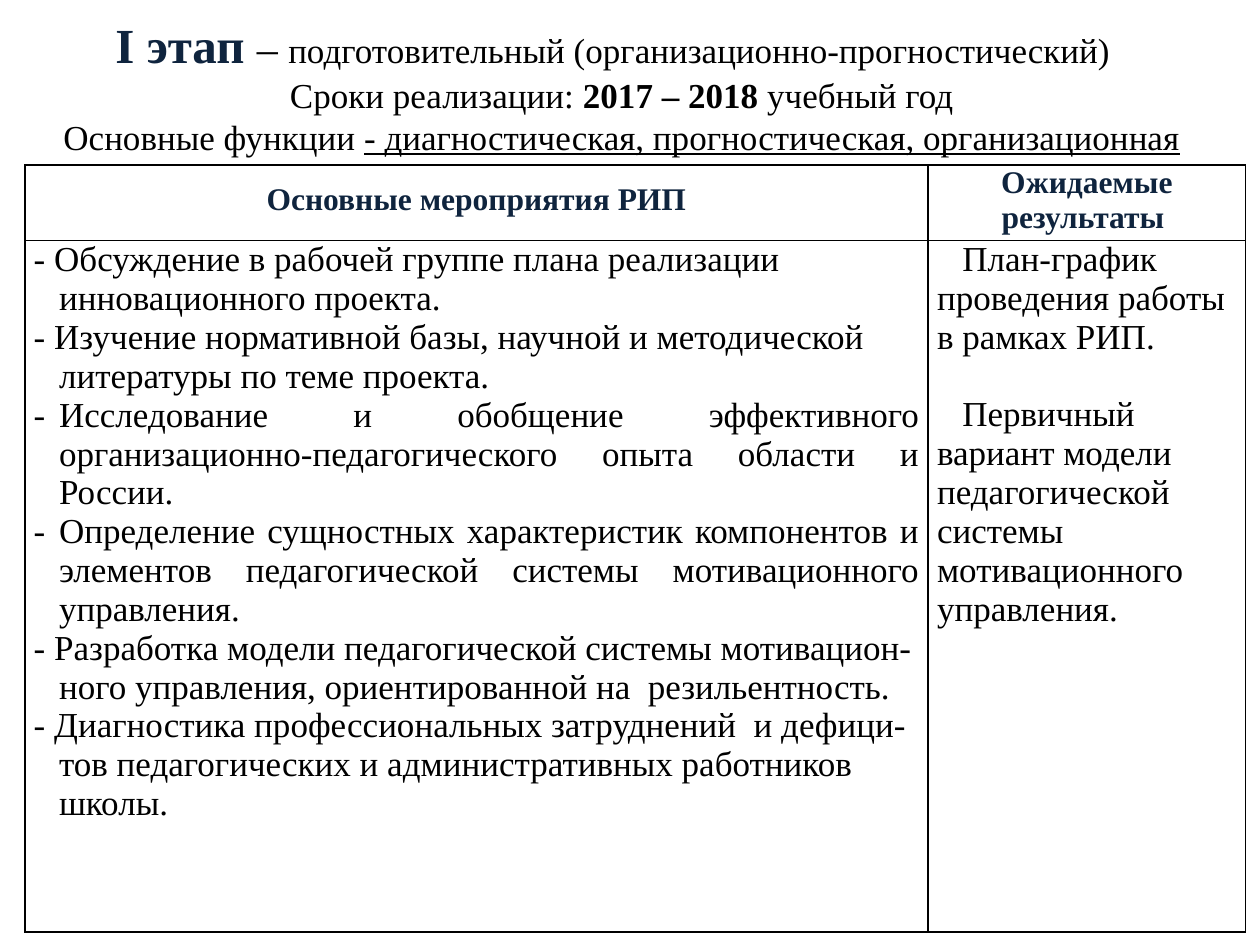
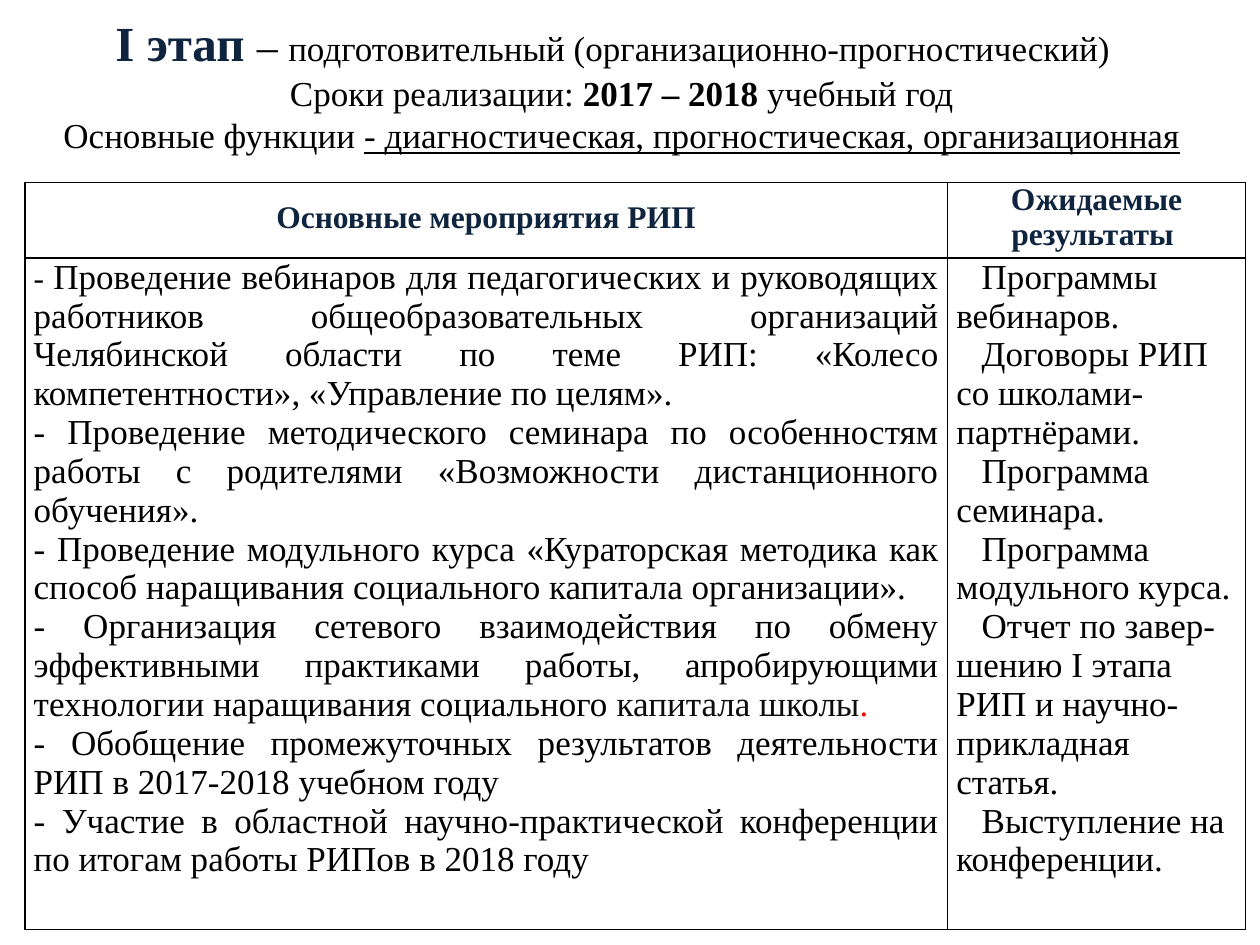
from lxml.etree import SubElement
from pptx import Presentation
from pptx.dml.color import RGBColor as Rgb
from pptx.enum.text import MSO_ANCHOR as Anchor, MSO_AUTO_SIZE as Auto, PP_ALIGN as Align
from pptx.oxml.ns import qn
from pptx.util import Cm, Pt

FONT = "Times New Roman"
INK = {"navy": "0F243E", "black": "000000", "dark": "0D0D0D", "red": "FF0000"}
WIDE = 24.61
LEFT = 0.5
HEAD = 1.52
STEP = 0.51
INSET = 0.18

TITLE = [
    [("I этап ", {"size": 28, "ink": "navy", "bold": True}),
     ("– ", {"size": 24}),
     ("подготовительный (организационно-прогностический) ", {})],
    [(" Сроки реализации: ", {}),
     ("2017 – 2018 ", {"bold": True}),
     ("учебный год", {})],
    [(" Основные функции ", {}),
     ("- диагностическая, прогностическая, организационная", {"line": True})],
]
HEADS = ["Основные мероприятия РИП", "Ожидаемые результаты "]

PLANS = [
    {"title": 0.03, "top": 3.33, "split": 18.21, "body": 13.94, "hang": True, "gap": 22,
     "tasks": [
         "- Обсуждение в рабочей группе плана реализации инновационного проекта.",
         "- Изучение нормативной базы, научной и методической литературы по теме проекта.",
         "Исследование и обобщение эффективного организационно-педагогического опыта области и России.",
         "Определение сущностных характеристик компонентов и элементов педагогической системы "
         "мотивационного управления.",
         "- Разработка модели педагогической системы мотивацион-ного управления, "
         "ориентированной на  резильентность.",
         "- Диагностика профессиональных затруднений  и дефици-тов педагогических "
         "и административных работников школы."],
     "results": [
         "План-график проведения работы в рамках РИП.",
         "Первичный вариант модели педагогической системы мотивационного управления."]},
    {"title": 0, "top": 3.68, "split": 18.6, "body": 13.54, "hang": False, "gap": 0,
     "tasks": [
         [("- ", {"size": 18}),
          ("Проведение вебинаров для педагогических и руководящих работников общеобразовательных "
           "организаций Челябинской области по теме РИП: «Колесо компетентности», "
           "«Управление по целям».", {})],
         "- Проведение методического семинара по особенностям работы с родителями "
         "«Возможности дистанционного обучения».",
         "- Проведение модульного курса «Кураторская методика как способ наращивания "
         "социального капитала организации».",
         [("- Организация сетевого взаимодействия по обмену эффективными практиками работы, "
           "апробирующими технологии наращивания социального ", {}),
          ("капитала школы", {"ink": "dark"}),
          (".", {"ink": "red"})],
         "- Обобщение промежуточных результатов деятельности РИП в 2017-2018 учебном году",
         "- Участие в областной научно-практической конференции по итогам работы РИПов в 2018 году"],
     "results": [
         "Программы вебинаров.",
         "Договоры РИП со школами-партнёрами.",
         "Программа семинара.",
         "Программа модульного курса.",
         "Отчет по завер-шению I этапа РИП и научно-прикладная статья.",
         "Выступление на конференции."]},
]


def style(run, size=20, ink="black", bold=False, line=False):
    """Give a run its font."""
    font = run.font
    font.name, font.size, font.bold, font.underline = FONT, Pt(size), bold, line
    font.color.rgb = Rgb.from_string(INK[ink])


def write(frame, lines, align):
    """Fill a frame with one paragraph per line and return the paragraphs."""
    pars = [frame.paragraphs[0]] + [frame.add_paragraph() for _ in lines[1:]]
    for par, parts in zip(pars, lines):
        par.alignment = align
        for text, look in [(parts, {})] if isinstance(parts, str) else parts:
            run = par.add_run()
            run.text = text
            style(run, **look)
    return pars


def indent(par, left, first, mark=None):
    """Set the indents of a paragraph and its bullet."""
    props = par._p.get_or_add_pPr()
    props.set("marL", str(Cm(left)))
    props.set("indent", str(Cm(first)))
    if mark:
        SubElement(props, qn("a:buFont"), typeface=FONT)
        SubElement(props, qn("a:buChar"), char=mark)


def frame_cell(cell):
    """Give a cell thin black borders, no fill and narrow margins."""
    props = cell._tc.get_or_add_tcPr()
    for side in ("lnL", "lnR", "lnT", "lnB"):
        edge = SubElement(props, qn(f"a:{side}"), w=str(Pt(1)))
        fill = SubElement(edge, qn("a:solidFill"))
        SubElement(fill, qn("a:srgbClr"), val=INK["black"])
    cell.fill.background()
    cell.margin_left = cell.margin_right = Cm(INSET)
    cell.margin_top = cell.margin_bottom = 0


def add_title(slide, top):
    """Place the stage title."""
    box = slide.shapes.title
    box.left, box.top, box.width, box.height = Cm(0), Cm(top), Cm(24.89), Cm(3.4)
    frame = box.text_frame
    frame.word_wrap, frame.auto_size = True, Auto.NONE
    frame.vertical_anchor = Anchor.MIDDLE
    write(frame, TITLE, Align.CENTER)


def add_plan(slide, plan):
    """Place the table of tasks and results."""
    high = HEAD + plan["body"]
    table = slide.shapes.add_table(2, 2, Cm(LEFT), Cm(plan["top"]), Cm(WIDE), Cm(high)).table
    table.first_row = table.horz_banding = False
    for col, wide in zip(table.columns, (plan["split"], WIDE - plan["split"])):
        col.width = Cm(wide)
    for row, tall in zip(table.rows, (HEAD, plan["body"])):
        row.height = Cm(tall)
    for cell in table.iter_cells():
        frame_cell(cell)
    for col, text in enumerate(HEADS):
        look = {"size": 18, "ink": "navy", "bold": True}
        pars = write(table.cell(0, col).text_frame, [[(text, look)]], Align.CENTER)
        if col == 0:
            pars[0].line_spacing = 1.5
    for par in write(table.cell(1, 0).text_frame, plan["tasks"], Align.JUSTIFY):
        if plan["hang"]:
            typed = par.text.startswith("-")
            par.alignment = Align.LEFT if typed else Align.JUSTIFY
            indent(par, STEP, -STEP, None if typed else "-")
    pars = write(table.cell(1, 1).text_frame, plan["results"], Align.LEFT)
    for par in pars:
        indent(par, 0, STEP)
    for par in pars[1:]:
        par.space_before = Pt(plan["gap"])


def main():
    """Build both slides and save them."""
    deck = Presentation()
    deck.slide_width, deck.slide_height = Cm(25.4), Cm(19.05)
    for plan in PLANS:
        slide = deck.slides.add_slide(deck.slide_layouts[5])
        add_title(slide, plan["title"])
        add_plan(slide, plan)
    deck.save("out.pptx")


if __name__ == "__main__":
    main()
